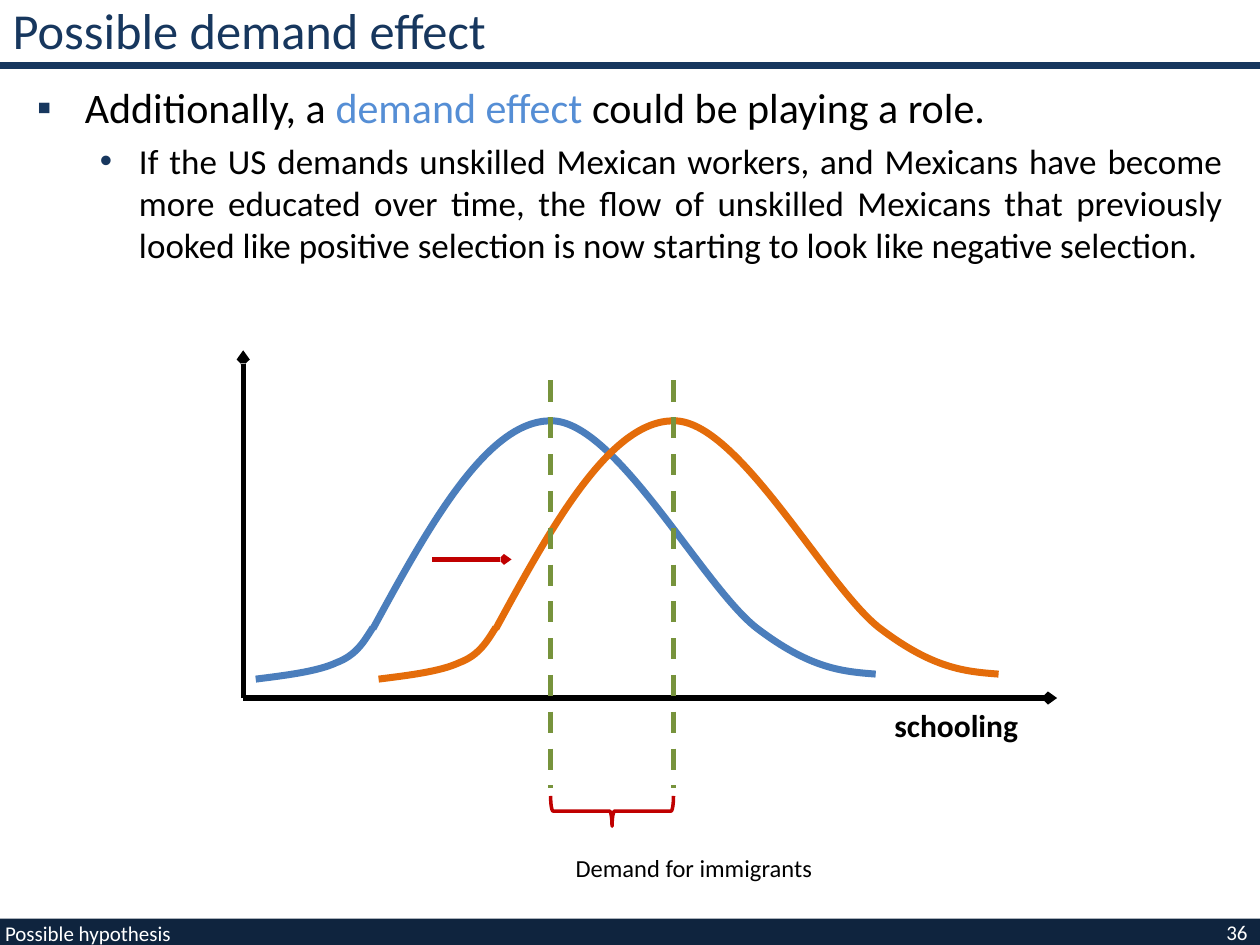
from pptx import Presentation
from pptx.dml.color import RGBColor
from pptx.enum.dml import MSO_LINE
from pptx.enum.shapes import MSO_CONNECTOR, MSO_SHAPE
from pptx.enum.text import MSO_ANCHOR, MSO_AUTO_SIZE, PP_ALIGN
from pptx.oxml.ns import qn
from pptx.util import Inches, Pt
from lxml.etree import SubElement

NAVY = RGBColor(0x17, 0x37, 0x5E)
DARK_NAVY = RGBColor(0x0F, 0x24, 0x3E)
SKY = RGBColor(0x55, 0x8E, 0xD5)
BLUE = RGBColor(0x4B, 0x7E, 0xBC)
ORANGE = RGBColor(0xE4, 0x6C, 0x0A)
GREEN = RGBColor(0x77, 0x93, 0x3C)
RED = RGBColor(0xC0, 0x00, 0x00)
BLACK = RGBColor(0, 0, 0)
WHITE = RGBColor(0xFF, 0xFF, 0xFF)

COLUMNS, ROWS = 100, 75
CELL = Inches(10) / COLUMNS

deck = Presentation()
deck.slide_width = round(COLUMNS * CELL)
deck.slide_height = round(ROWS * CELL)
slide = deck.slides.add_slide(deck.slide_layouts[5])
shapes = slide.shapes


def on_grid(*cells):
    return [round(cell * CELL) for cell in cells]


def add_text(paragraph, words, size, color, bold=False):
    run = paragraph.add_run()
    run.text = words
    run.font.name = "Calibri"
    run.font.size = Pt(size)
    run.font.bold = bold
    run.font.color.rgb = color


footer_bar = shapes.add_shape(MSO_SHAPE.RECTANGLE, *on_grid(0, 72.9, COLUMNS, 2.1))
footer_bar.shadow.inherit = False
footer_bar.fill.solid()
footer_bar.fill.fore_color.rgb = DARK_NAVY
footer_bar.line.fill.background()

heading = shapes.title
heading.left, heading.top, heading.width, heading.height = on_grid(0, 0.2, COLUMNS, 4.3)
heading.text_frame.auto_size = MSO_AUTO_SIZE.NONE
heading.text_frame.vertical_anchor = MSO_ANCHOR.MIDDLE
heading.text_frame.paragraphs[0].alignment = PP_ALIGN.LEFT
add_text(heading.text_frame.paragraphs[0], "Possible demand effect", 28.8, NAVY)

argument = shapes.add_textbox(*on_grid(1.95, 6, 96.1, 64.6)).text_frame
argument.word_wrap = True
points = [
    (0, "▪", 0.38, 0.38, 24, [
        ("Additionally, a ", BLACK),
        ("demand effect ", SKY),
        ("could be playing a role.", BLACK),
    ]),
    (1, "•", 0.81, 0.31, 20, [
        ("If the US demands unskilled Mexican workers, and Mexicans have become "
         "more educated over time, the flow of unskilled Mexicans that previously "
         "looked like positive selection is now starting to look like negative "
         "selection.", BLACK),
    ]),
]
for level, bullet, margin, hanging, size, pieces in points:
    point = argument.paragraphs[0] if level == 0 else argument.add_paragraph()
    point.level = level
    point.alignment = PP_ALIGN.JUSTIFY
    point.space_before = Pt(size * 0.2)
    properties = point._p.get_or_add_pPr()
    properties.set("marL", str(Inches(margin)))
    properties.set("indent", str(-Inches(hanging)))
    bullet_color = SubElement(properties, qn("a:buClr"))
    SubElement(bullet_color, qn("a:srgbClr")).set("val", str(NAVY))
    SubElement(properties, qn("a:buFont")).set("typeface", "Arial")
    SubElement(properties, qn("a:buChar")).set("char", bullet)
    for words, color in pieces:
        add_text(point, words, size, color)

diagram = shapes.add_group_shape().shapes
axis_x, axis_y = 19.3, 55.4
first_peak, shift = 43.7, 9.75
peaks = [first_peak, first_peak + shift]

hump = [
    (29.6, 49.9), (34.1, 41.6), (38.7, 33.4), (first_peak, 33.4),
    (48.8, 33.3), (55.7, 46.4), (60, 49.8),
    (64.3, 53.1), (66.9, 53.3), (69.5, 53.5),
]
left_tail = [
    (29.6, 49.8), (28.9, 50.9), (28.3, 52), (26.7, 52.6),
    (25.2, 53.3), (22.7, 53.6), (20.3, 53.9),
]
for offset, color in [(0, BLUE), (shift, ORANGE)]:
    for controls in [hump, left_tail]:
        places = [on_grid(x + offset, y) for x, y in controls]
        builder = diagram.build_freeform(*places[0])
        builder.add_line_segments(places[1:], close=False)
        distribution = builder.convert_to_shape()
        segments = list(distribution._element.iter(qn("a:lnTo")))
        for start in range(0, len(segments), 3):
            outline = segments[start].getparent()
            bezier = SubElement(outline, qn("a:cubicBezTo"))
            for segment in segments[start:start + 3]:
                bezier.append(segment[0])
                outline.remove(segment)
        distribution.shadow.inherit = False
        distribution.fill.background()
        distribution.line.color.rgb = color
        distribution.line.width = Pt(4)

rules = [
    (shapes, (0, 5.2, COLUMNS, 5.2), NAVY, 3.5, False, False),
    (diagram, (axis_x, axis_y, axis_x, 27.8), BLACK, 3, True, False),
    (diagram, (axis_x, axis_y, 83.9, axis_y), BLACK, 3, True, False),
    (diagram, (34.3, 44.4, 40.6, 44.4), RED, 2.5, True, False),
]
rules += [(diagram, (peak, 30.2, peak, 62.5), GREEN, 3, False, True) for peak in peaks]
for layer, ends, color, width, arrow, dashed in rules:
    rule = layer.add_connector(MSO_CONNECTOR.STRAIGHT, *on_grid(*ends))
    rule.line.color.rgb = color
    rule.line.width = Pt(width)
    if dashed:
        rule.line.dash_style = MSO_LINE.DASH
    if arrow:
        arrowhead = SubElement(rule.line._get_or_add_ln(), qn("a:tailEnd"))
        for key, setting in [("type", "arrow"), ("w", "sm"), ("len", "sm")]:
            arrowhead.set(key, setting)
    SubElement(rule._element.spPr, qn("a:effectLst"))

brace_depth = 2.4
brace_left = sum(peaks) / 2 - brace_depth / 2
brace = diagram.add_shape(
    MSO_SHAPE.LEFT_BRACE, *on_grid(brace_left, 59.5, brace_depth, shift))
brace.rotation = 270
brace.shadow.inherit = False
brace.fill.background()
brace.line.color.rgb = RED
brace.line.width = Pt(2)

diagram_labels = [
    ("schooling", (70, 55.55, 14.7, 4), 18, True),
    ("Demand for immigrants", (44.7, 67.2, 26.4, 3.4), 14, False),
]
for words, place, size, bold in diagram_labels:
    label = diagram.add_textbox(*on_grid(*place)).text_frame
    label.word_wrap = True
    add_text(label.paragraphs[0], words, size, BLACK, bold)

page_number = shapes.add_textbox(*on_grid(76.7, 72.9, 23.3, 2.1)).text_frame
page_number.word_wrap = True
page_number.vertical_anchor = MSO_ANCHOR.MIDDLE
page_number.paragraphs[0].alignment = PP_ALIGN.RIGHT
add_text(page_number.paragraphs[0], "36", 12, WHITE)

section = shapes.add_textbox(*on_grid(0.4, 73.1, 26, 2)).text_frame
section.word_wrap = True
section.margin_left = section.margin_right = 0
section.margin_top = section.margin_bottom = 0
add_text(section.paragraphs[0], "Possible hypothesis", 12, WHITE)

deck.save("out.pptx")
